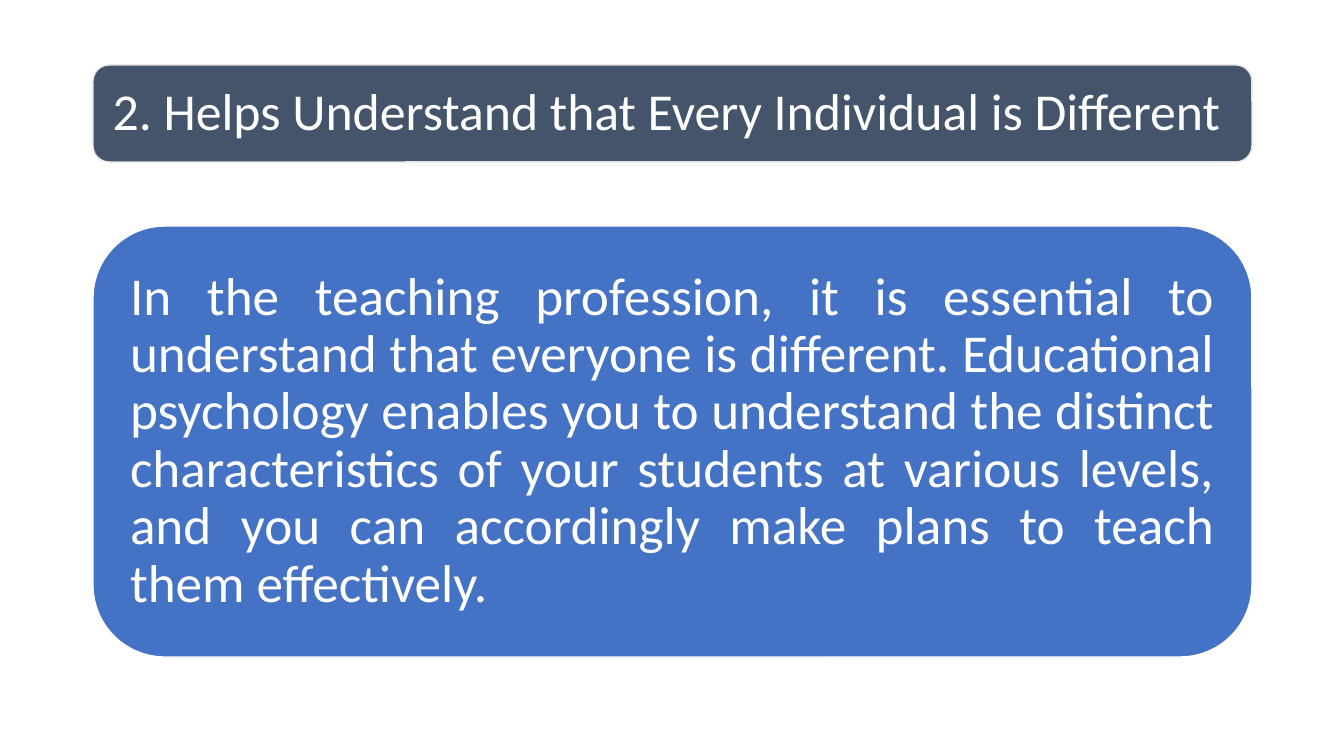
from pptx import Presentation
from pptx.dml.color import RGBColor as RGB
from pptx.enum.shapes import MSO_SHAPE as Shape
from pptx.enum.text import MSO_ANCHOR as Anchor, PP_ALIGN as Align
from pptx.util import Emu, Pt

SCALE = 914400 / 100.8
COLORS = {
    "slate": "44546A",
    "blue": "4472C4",
    "gray": "E7E6E6",
    "white": "FFFFFF",
}
LEFT, WIDTH = 93, 1159
TITLE = "2. Helps Understand that Every Individual is Different"
BODY = (
    "In the teaching profession, it is essential to understand that everyone "
    "is different. Educational psychology enables you to understand the "
    "distinct characteristics of your students at various levels, and you can "
    "accordingly make plans to teach them effectively."
)


def px(count):
    return Emu(round(count * SCALE))


def color(name):
    return RGB.from_string(COLORS[name])


def add_run(para, text, size):
    run = para.add_run()
    run.text = text
    run.font.name = "Calibri"
    run.font.size = Pt(size)
    run.font.color.rgb = color("white")


def add_panel(slide, top, height, fill, line, text, size, inset, align):
    panel = slide.shapes.add_shape(
        Shape.ROUNDED_RECTANGLE, px(LEFT), px(top), px(WIDTH), px(height)
    )
    panel.shadow.inherit = False
    panel.fill.solid()
    panel.fill.fore_color.rgb = color(fill)
    panel.line.color.rgb = color(line)
    panel.line.width = Pt(1)
    frame = panel.text_frame
    frame.word_wrap = True
    frame.vertical_anchor = Anchor.MIDDLE
    frame.margin_left = frame.margin_right = px(inset)
    frame.margin_top = frame.margin_bottom = px(inset)
    para = frame.paragraphs[0]
    para.alignment = align
    para.line_spacing = 0.9
    add_run(para, text, size)


def main():
    deck = Presentation()
    deck.slide_width, deck.slide_height = px(1344), px(756)
    slide = deck.slides.add_slide(deck.slide_layouts[6])
    add_panel(slide, 65, 97, "slate", "gray", TITLE, 37, 15, Align.LEFT)
    add_panel(slide, 226, 431, "blue", "white", BODY, 38, 16, Align.JUSTIFY)
    deck.save("out.pptx")


if __name__ == "__main__":
    main()
